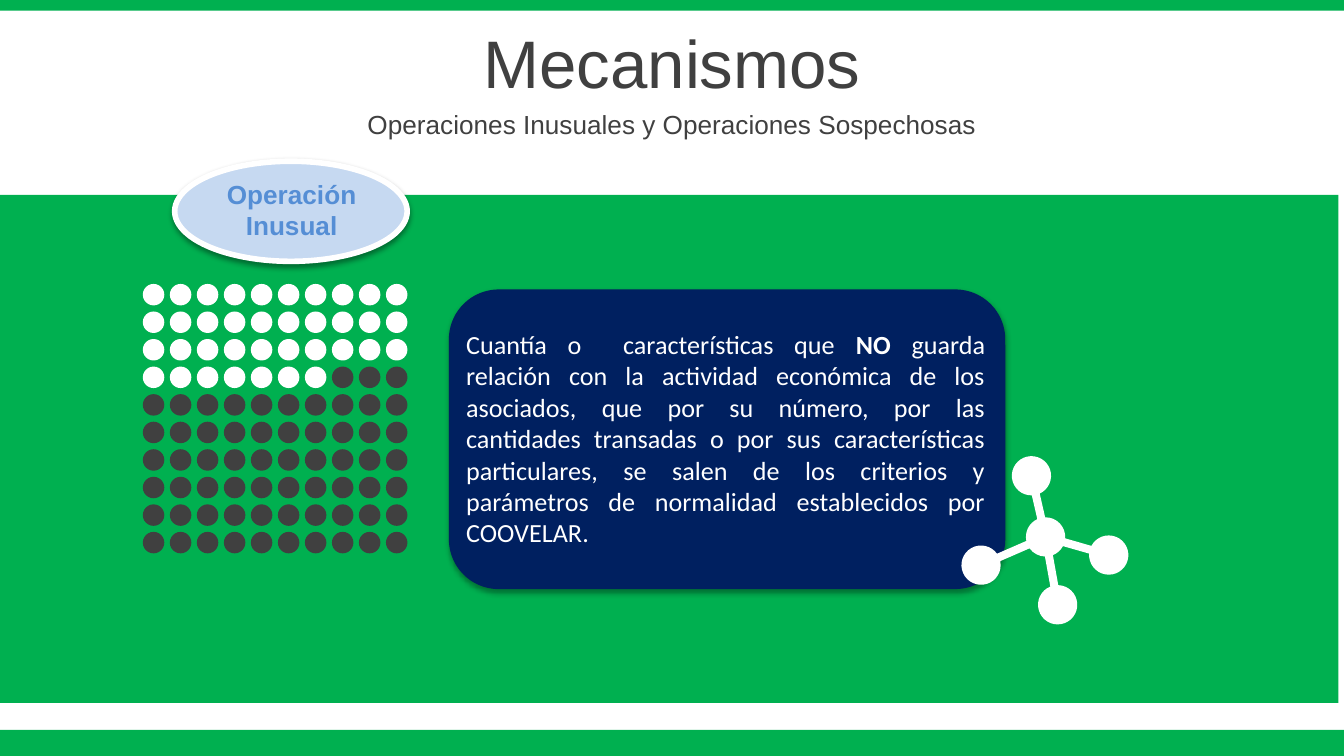
from math import asin, atan2, cos, pi, sin, tan
from typing import NamedTuple, Optional

from lxml.etree import SubElement
from pptx import Presentation
from pptx.dml.color import RGBColor
from pptx.enum.shapes import MSO_SHAPE
from pptx.enum.text import MSO_ANCHOR, MSO_AUTO_SIZE, PP_ALIGN
from pptx.oxml.ns import qn
from pptx.util import Inches, Pt

COLORS = {"green": "00B050", "white": "FFFFFF", "dark": "404040",
          "navy": "002060", "pale": "C6D9F1", "blue": "558ED5"}
COLS, ROWS = 100, 56.25
CELL = Inches(0.1)


class Box(NamedTuple):
    """A rectangle in grid columns and rows."""
    col: float
    row: float
    width: float
    height: float

    def emu(self) -> list[int]:
        """Return left, top, width and height as lengths."""
        return [round(v * CELL) for v in self]


class Node(NamedTuple):
    """A point in columns and rows."""
    col: float
    row: float


BARS = [Box(0, 54.3, COLS, 1.95), Box(0, 0, COLS, 0.8), Box(-0.4, 14.5, COLS, 37.8)]
DOTS, DOT_SIZE, WHITE_DOTS = 10, 1.6, 37
DOT_ORIGIN, DOT_PITCH = Node(10.63, 21.13), Node(2.01, 2.05)
HUB = Node(77.8, 39.95)
SATELLITES = [Node(82.5, 41.3), Node(78.7, 45), Node(73, 42.05), Node(76.75, 35.4)]
BALL_RADIUS, BOND_WIDTH = 1.46, 0.6


def rgb(name: str) -> RGBColor:
    """Look up a colour by name."""
    return RGBColor.from_string(COLORS[name])


def paint(s, fill: str, line: Optional[str] = None, shadow: int = 0) -> None:
    """Set fill, outline and the opacity percentage of a soft shadow."""
    s.fill.solid()
    s.fill.fore_color.rgb = rgb(fill)
    if line:
        s.line.color.rgb = rgb(line)
        s.line.width = Pt(3)
    else:
        s.line.fill.background()
    s.shadow.inherit = False
    if shadow:
        effects = s._element.spPr.find(qn("a:effectLst"))
        outer = SubElement(effects, qn("a:outerShdw"), blurRad=str(Pt(3.1)),
                           dist=str(Pt(1.7)), dir="5400000", rotWithShape="0")
        color = SubElement(outer, qn("a:srgbClr"), val="000000")
        SubElement(color, qn("a:alpha"), val=str(shadow * 1000))


def add_shape(shapes, kind: MSO_SHAPE, box: Box, fill: str, **style) -> None:
    """Draw a painted preset shape."""
    paint(shapes.add_shape(kind, *box.emu()), fill, **style)


def write(tf, text: str, *, size: float = 14, font: str = "Arial", color: str = "dark",
          bold: bool = False, align: PP_ALIGN = PP_ALIGN.CENTER) -> None:
    """Append a formatted run to the first paragraph."""
    p = tf.paragraphs[0]
    p.alignment = align
    r = p.add_run()
    r.text = text
    r.font.size, r.font.name, r.font.bold = Pt(size), font, bold
    r.font.color.rgb = rgb(color)


def prepare(sp, box: Box, anchor: MSO_ANCHOR = MSO_ANCHOR.MIDDLE):
    """Place a text holder and return its wrapped text frame."""
    sp.left, sp.top, sp.width, sp.height = box.emu()
    tf = sp.text_frame
    tf.word_wrap = True
    tf.auto_size = MSO_AUTO_SIZE.NONE
    tf.vertical_anchor = anchor
    return tf


def arc(center: Node, start: float, end: float, curves: int) -> list[Node]:
    """Return an arc's first point, then three Bezier points for each curve."""
    step = (end - start) / curves
    pull = 4 / 3 * tan(step / 4)

    def at(angle: float, tangent: float = 0) -> Node:
        return Node(center.col + BALL_RADIUS * (cos(angle) - tangent * sin(angle)),
                    center.row + BALL_RADIUS * (sin(angle) + tangent * cos(angle)))

    points = [at(start)]
    for i in range(curves):
        a = start + i * step
        points += [at(a, pull), at(a + step, -pull), at(a + step)]
    return points


def add_molecule(shapes) -> None:
    """Trace the hub, its bonds and its satellites as one curved outline."""
    gap = asin(BOND_WIDTH / 2 / BALL_RADIUS)
    angles = [atan2(n.row - HUB.row, n.col - HUB.col) % (2 * pi) for n in SATELLITES]
    arcs = []
    for node, angle, after in zip(SATELLITES, angles, angles[1:] + [angles[0] + 2 * pi]):
        arcs.append(arc(node, angle + pi + gap, angle + 3 * pi - gap, 4))
        arcs.append(arc(HUB, angle + gap, after - gap, 1))
    points = [(p.col * CELL, p.row * CELL) for part in arcs for p in part]
    builder = shapes.build_freeform(*points[0], scale=1.0)
    builder.add_line_segments(points[1:], close=True)
    s = builder.convert_to_shape()
    paint(s, "white")

    steps = list(s._element.spPr.iter(qn("a:moveTo"), qn("a:lnTo")))
    first = 0
    for part in arcs:
        for i in range(first + 1, first + len(part), 3):
            curve = steps[i]
            curve.addprevious(bezier := curve.makeelement(qn("a:cubicBezTo")))
            for step in steps[i:i + 3]:
                bezier.append(step[0])
                step.getparent().remove(step)
        first += len(part)


def add_dots(shapes) -> None:
    """Draw the square of dots, the first ones white."""
    group = shapes.add_group_shape()
    for i in range(DOTS * DOTS):
        row, col = divmod(i, DOTS)
        box = Box(DOT_ORIGIN.col + col * DOT_PITCH.col,
                  DOT_ORIGIN.row + row * DOT_PITCH.row, DOT_SIZE, DOT_SIZE)
        add_shape(group.shapes, MSO_SHAPE.OVAL, box, "white" if i < WHITE_DOTS else "dark")


def main() -> None:
    """Build and save the slide."""
    prs = Presentation()
    prs.slide_width, prs.slide_height = round(COLS * CELL), round(ROWS * CELL)
    slide = prs.slides.add_slide(prs.slide_layouts[0])
    shapes = slide.shapes

    tf = prepare(shapes.title, Box(0, 1.4, COLS, 6.3))
    tf.paragraphs[0].space_before = Pt(3)
    write(tf, "Mecanismos", size=36)
    tf = prepare(slide.placeholders[1], Box(0, 7.7, COLS, 3.1))
    write(tf, "Operaciones Inusuales y Operaciones Sospechosas")

    for bar in BARS:
        add_shape(shapes, MSO_SHAPE.RECTANGLE, bar, "green")
    add_shape(shapes, MSO_SHAPE.OVAL, Box(13, 12, 17.3, 7.45), "pale", line="white", shadow=38)
    box = Box(14.65, 12.75, 14.1, 5.7)
    write(prepare(shapes.add_textbox(*box.emu()), box), "Operación Inusual",
          color="blue", bold=True)
    add_shape(shapes, MSO_SHAPE.ROUNDED_RECTANGLE, Box(33.4, 21.54, 41.4, 22.3), "navy", shadow=35)
    add_dots(shapes)
    add_molecule(shapes)

    box = Box(33.7, 23.95, 40.6, 17.8)
    tf = prepare(shapes.add_textbox(*box.emu()), box, MSO_ANCHOR.TOP)
    for text, bold in [
        ("Cuantía o  características que ", False),
        ("NO", True),
        (" guarda relación con la actividad económica de los asociados, que por su "
         "número, por las cantidades transadas o por sus características particulares, "
         "se salen de los criterios y parámetros de normalidad establecidos por "
         "COOVELAR.", False),
    ]:
        write(tf, text, font="Calibri", color="white", bold=bold, align=PP_ALIGN.JUSTIFY)
    prs.save("out.pptx")


if __name__ == "__main__":
    main()
